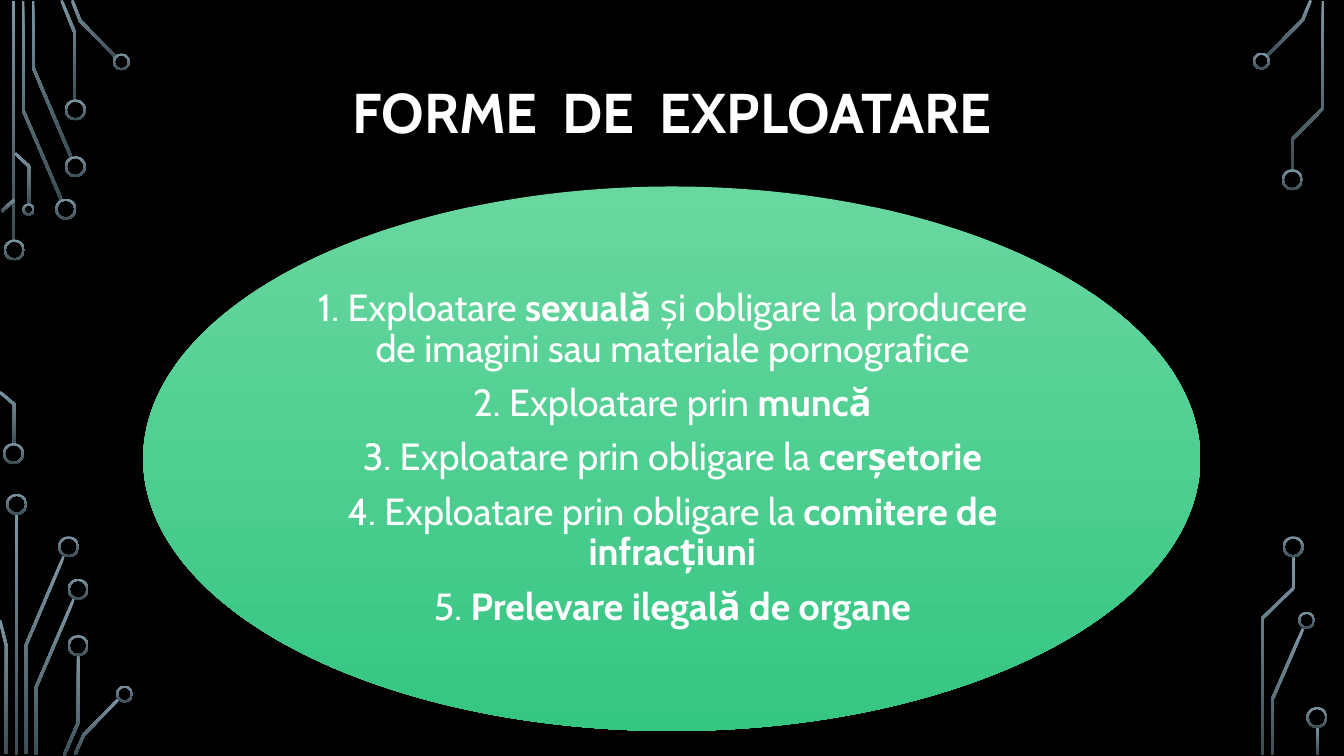
import math
from dataclasses import dataclass

import pptx
import pptx.dml.color
import pptx.enum.shapes
import pptx.enum.text
import pptx.util

Cm = pptx.util.Cm
Shapes = pptx.enum.shapes.MSO_SHAPE


@dataclass(frozen=True)
class Theme:
    """Colours, type and line sizes of the slide."""
    font: str = "Cabin"
    text: str = "FFFFFF"
    background: str = "000000"
    circuit: tuple = ("7C96A3", "3B4C54")
    ellipse: tuple = ("69D7A0", "35C682")
    title_size: int = 40
    list_size: int = 27
    list_gap: float = 9.45
    line_spacing: float = 0.9
    trace_width: float = 0.07
    ring_width: float = 0.05


THEME = Theme()
LARGE, MEDIUM, SMALL = 0.53, 0.43, 0.31

CORNERS = [
    {
        "origin": (0, 0),
        "traces": [
            [(0.34, 0.03), (0.34, 6.1)],
            [(0.58, 0.03), (0.58, 2.77), (1.55, 5.04)],
            [(0.83, 0.03), (0.83, 1.69), (1.8, 3.98)],
            [(1.55, 0.01), (1.89, 0.84), (1.89, 2.54)],
            [(1.82, 0.01), (2.02, 0.52), (2.93, 1.45)],
            [(0.04, 5.33), (0.36, 5.03)],
            [(0, 9.88), (0.36, 10.19), (0.36, 11.2)],
            [(0.38, 3.86), (0.74, 4.2), (0.74, 5.16)],
        ],
        "rings": [(0.36, 6.3, LARGE), (0.34, 11.43, LARGE), (1.66, 5.27, LARGE),
                  (1.9, 4.2, LARGE), (1.9, 2.77, LARGE), (3.06, 1.56, MEDIUM),
                  (0.72, 5.28, SMALL)],
    },
    {
        "origin": (0, 12.4),
        "traces": [
            [(0.42, 0.55), (0.42, 6.62)],
            [(1.61, 1.61), (0.65, 3.87), (0.65, 6.6)],
            [(0, 3.23), (0.16, 3.88), (0.16, 6.6)],
            [(1.87, 2.67), (0.9, 4.94), (0.9, 6.62)],
            [(1.97, 4.11), (1.97, 5.81), (1.61, 6.64)],
            [(3, 5.2), (2.11, 6.12), (1.89, 6.61)],
        ],
        "rings": [(0.42, 0.31, LARGE), (1.73, 1.38, LARGE), (1.97, 2.45, LARGE),
                  (1.97, 3.87, LARGE), (3.14, 5.09, MEDIUM)],
    },
    {
        "origin": (31.5, 0),
        "traces": [
            [(0.43, 1.41), (1.33, 0.5), (1.53, 0.01)],
            [(1.84, 0.03), (1.84, 2.73), (1.06, 3.52), (1.06, 4.29)],
        ],
        "rings": [(0.29, 1.54, MEDIUM), (1.07, 4.53, LARGE)],
    },
    {
        "origin": (31.5, 12.4),
        "traces": [
            [(1.34, 3.44), (0.57, 5.21), (0.57, 6.62)],
            [(1.1, 1.62), (1.1, 2.42), (0.31, 3.18), (0.31, 6.62)],
            [(1.71, 5.91), (1.71, 6.62)],
        ],
        "rings": [(1.43, 3.23, MEDIUM), (1.09, 1.38, LARGE), (1.69, 5.68, LARGE)],
    },
]

TITLE = [[("FORME  DE  EXPLOATARE", True)]]
EXPLOITATION_FORMS = [
    [("1. Exploatare ", False), ("sexuală", True),
     (" și obligare la producere de imagini sau materiale pornografice", False)],
    [("2. Exploatare prin ", False), ("muncă", True)],
    [("3. Exploatare prin obligare la ", False), ("cerșetorie", True)],
    [("4. Exploatare prin obligare la ", False), ("comitere de infracțiuni", True)],
    [("5. ", False), ("Prelevare ilegală de organe", True)],
]


def set_values(target, values):
    """Set each named attribute of the target."""
    for name, value in values.items():
        setattr(target, name, value)


def rgb(code):
    """Return the colour for a hex code."""
    return pptx.dml.color.RGBColor.from_string(code)


def paint(shape, colours):
    """Fill a shape from top to bottom with two colours, without line or shadow."""
    shape.shadow.inherit = False
    shape.line.fill.background()
    shape.fill.gradient()
    shape.fill.gradient_angle = 270
    for stop, position, colour in zip(shape.fill.gradient_stops, (0, 1), colours):
        stop.position = position
        stop.color.rgb = rgb(colour)


def band_outline(points, width):
    """Return the closed outline of a mitred band along the points."""
    headings = [math.atan2(y2 - y1, x2 - x1)
                for (x1, y1), (x2, y2) in zip(points, points[1:])]
    left, right = [], []
    for (x, y), before, after in zip(points, headings[:1] + headings, headings + headings[-1:]):
        turn = math.remainder(after - before, math.tau) / 2
        reach = width / 2 / math.cos(turn)
        normal = before + turn + math.pi / 2
        dx, dy = reach * math.cos(normal), reach * math.sin(normal)
        left.append((x + dx, y + dy))
        right.append((x - dx, y - dy))
    return left + right[::-1]


def add_circuit(slide, origin, traces, rings):
    """Draw circuit traces and their ring ends from a corner origin."""
    left, top = origin
    for trace in traces:
        outline = [(Cm(left + x), Cm(top + y)) for x, y in band_outline(trace, THEME.trace_width)]
        builder = slide.shapes.build_freeform(*outline[0])
        builder.add_line_segments(outline[1:], close=True)
        paint(builder.convert_to_shape(), THEME.circuit)
    for x, y, size in rings:
        ring = slide.shapes.add_shape(Shapes.DONUT, Cm(left + x - size / 2),
                                      Cm(top + y - size / 2), Cm(size), Cm(size))
        ring.adjustments[0] = THEME.ring_width / size
        paint(ring, THEME.circuit)


def add_text(slide, box, paragraphs, size, gap=0, inset=(0.25, 0.13)):
    """Place centred paragraphs of plain and bold runs in a box."""
    frame = slide.shapes.add_textbox(*map(Cm, box)).text_frame
    across, down = map(Cm, inset)
    set_values(frame, {"word_wrap": True,
                       "vertical_anchor": pptx.enum.text.MSO_ANCHOR.MIDDLE,
                       "margin_left": across, "margin_right": across,
                       "margin_top": down, "margin_bottom": down})
    for index, runs in enumerate(paragraphs):
        paragraph = frame.add_paragraph() if index else frame.paragraphs[0]
        set_values(paragraph, {"alignment": pptx.enum.text.PP_ALIGN.CENTER,
                               "line_spacing": THEME.line_spacing,
                               "space_after": pptx.util.Pt(gap)})
        for text, bold in runs:
            run = paragraph.add_run()
            run.text = text
            set_values(run.font, {"name": THEME.font, "size": pptx.util.Pt(size), "bold": bold})
            run.font.color.rgb = rgb(THEME.text)


def add_forms_ellipse(slide, box):
    """Draw the ellipse with the list of forms inside it."""
    left, top, width, height = box
    ellipse = slide.shapes.add_shape(Shapes.OVAL, *map(Cm, box))
    paint(ellipse, THEME.ellipse)
    inner = (left + 3.91, top + 2.01, width - 7.79, height - 4.02)
    add_text(slide, inner, EXPLOITATION_FORMS, THEME.list_size, THEME.list_gap, (0.1, 0.1))


def main():
    """Build and save the presentation."""
    presentation = pptx.Presentation()
    set_values(presentation, {"slide_width": Cm(33.87), "slide_height": Cm(19.05)})
    slide = presentation.slides.add_slide(presentation.slide_layouts[6])
    slide.background.fill.solid()
    slide.background.fill.fore_color.rgb = rgb(THEME.background)
    for corner in CORNERS:
        add_circuit(slide, **corner)
    add_text(slide, (3.18, 0, 27.51, 5.82), TITLE, THEME.title_size)
    add_forms_ellipse(slide, (3.61, 4.7, 26.64, 13.72))
    presentation.save("out.pptx")


if __name__ == "__main__":
    main()
